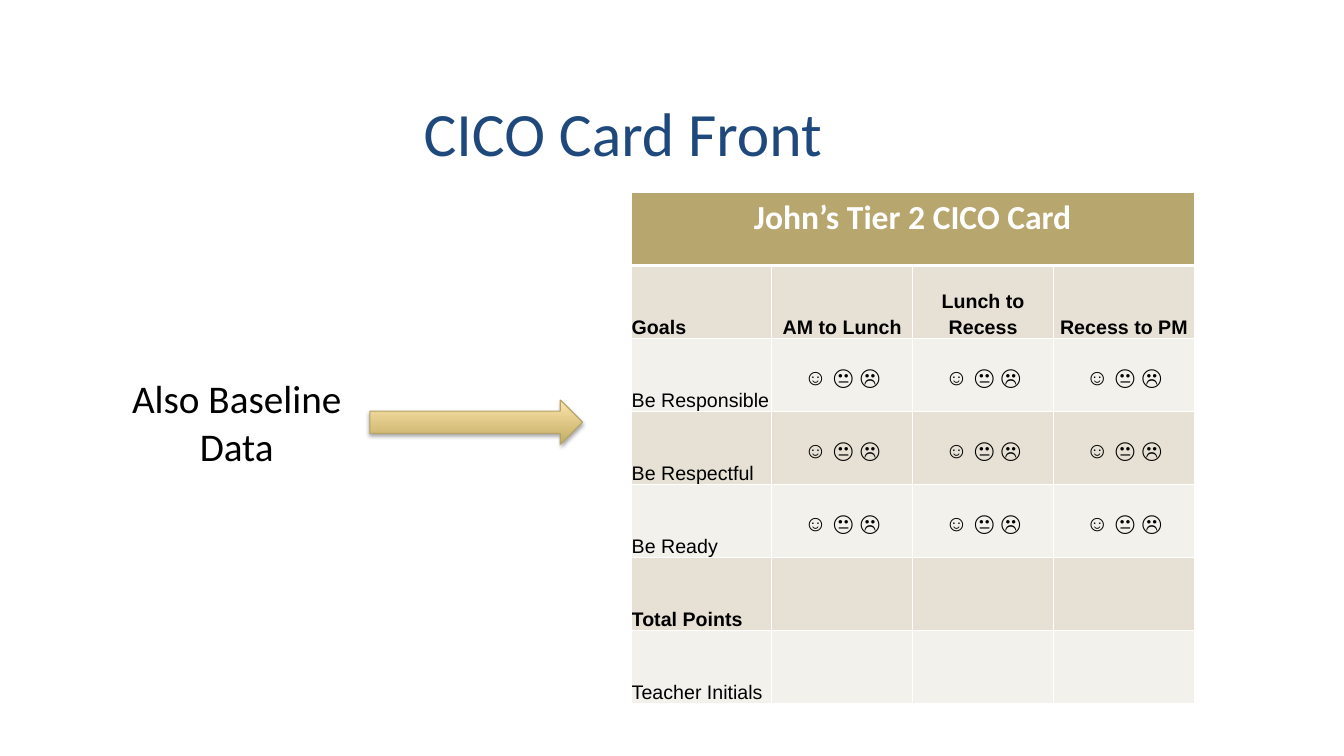
import lxml.etree
import pptx
import pptx.dml.color
import pptx.enum.shapes
import pptx.enum.text
import pptx.oxml.ns
import pptx.util
from pptx.util import Cm

ALIGN = pptx.enum.text.PP_ALIGN
ANCHOR = pptx.enum.text.MSO_ANCHOR
FACES = "☺ 😐 ☹"
PERIODS = ["AM to Lunch", "Lunch to Recess", "Recess to PM"]
ROWS = [
    ["Goals"] + PERIODS,
    ["Be Responsible"] + [FACES] * 3,
    ["Be Respectful"] + [FACES] * 3,
    ["Be Ready"] + [FACES] * 3,
    ["Total Points"] + [""] * 3,
    ["Teacher Initials"] + [""] * 3,
]
BOLD_TEXTS = ["Goals", "Total Points"] + PERIODS
BAND_COLOURS = ["E6E1D4", "F3F1EB"]


def set_colour(colour_format, value):
    colour_format.rgb = pptx.dml.color.RGBColor.from_string(value)


def add_element(parent, tag, **attributes):
    element = lxml.etree.SubElement(parent, pptx.oxml.ns.qn(tag))
    for name, value in attributes.items():
        element.set(name, str(value))
    return element


def write_text(text_frame, text, size, font, colour, bold=False, align=ALIGN.CENTER):
    text_frame.text = text
    paragraph = text_frame.paragraphs[0]
    paragraph.alignment = align
    for run in paragraph.runs:
        run.font.size = pptx.util.Pt(size)
        run.font.name = font
        run.font.bold = bold
        set_colour(run.font.color, colour)
    return paragraph


def add_text(slide, left, top, width, height, text, size, colour):
    shape = slide.shapes.add_textbox(Cm(left), Cm(top), Cm(width), Cm(height))
    text_frame = shape.text_frame
    text_frame.word_wrap = True
    write_text(text_frame, text, size, "Calibri", colour)
    return text_frame


def add_arrow(slide, left, top, width, height):
    arrow = slide.shapes.add_shape(
        pptx.enum.shapes.MSO_SHAPE.RIGHT_ARROW, Cm(left), Cm(top), Cm(width), Cm(height)
    )
    arrow.fill.gradient()
    arrow.fill.gradient_angle = 90
    for stop, colour in zip(arrow.fill.gradient_stops, ["C2AC62", "FCE5AB"]):
        set_colour(stop.color, colour)
    set_colour(arrow.line.color, "B5A369")
    arrow.line.width = pptx.util.Pt(0.75)
    arrow.shadow.inherit = False
    effects = arrow.element.spPr.find(pptx.oxml.ns.qn("a:effectLst"))
    shadow = add_element(
        effects, "a:outerShdw",
        blurRad=pptx.util.Pt(3.1), dist=pptx.util.Pt(1.8), dir=5400000, rotWithShape=0,
    )
    shadow_colour = add_element(shadow, "a:srgbClr", val="000000")
    add_element(shadow_colour, "a:alpha", val=35000)


def style_cell(cell, fill, top=1, bottom=1):
    properties = cell._tc.get_or_add_tcPr()
    for side, width in [("L", 1), ("R", 1), ("T", top), ("B", bottom)]:
        line = add_element(properties, "a:ln" + side, w=pptx.util.Pt(width))
        line_fill = add_element(line, "a:solidFill")
        add_element(line_fill, "a:srgbClr", val="FFFFFF")
    cell.fill.solid()
    set_colour(cell.fill.fore_color, fill)


def fill_goal_cell(cell, text, align):
    is_faces = text == FACES
    cell.margin_left = cell.margin_right = cell.margin_top = Cm(0.02)
    cell.margin_bottom = 0
    cell.vertical_anchor = ANCHOR.MIDDLE if is_faces else ANCHOR.BOTTOM
    paragraph = write_text(
        cell.text_frame, text, 16 if is_faces else 14, "Arial", "000000",
        text in BOLD_TEXTS, align,
    )
    paragraph.line_spacing = 1.15
    paragraph.space_after = pptx.util.Pt(0 if is_faces else 10)


def add_card(slide, left, top, column_width, row_height):
    row_count, column_count = len(ROWS) + 1, len(ROWS[0])
    table = slide.shapes.add_table(
        row_count, column_count, Cm(left), Cm(top),
        Cm(column_width * column_count), Cm(row_height * row_count),
    ).table
    table.first_row = False
    table.horz_banding = False
    for column in table.columns:
        column.width = Cm(column_width)
    for row in table.rows:
        row.height = Cm(row_height)
    for column_index in range(column_count):
        style_cell(table.cell(0, column_index), "B7A66D", bottom=3)
    title_cell = table.cell(0, 0)
    title_cell.merge(table.cell(0, column_count - 1))
    write_text(title_cell.text_frame, "John’s Tier 2 CICO Card", 24, "Calibri", "FFFFFF", True)
    for row_index, texts in enumerate(ROWS):
        for column_index, text in enumerate(texts):
            cell = table.cell(row_index + 1, column_index)
            style_cell(cell, BAND_COLOURS[row_index % 2], top=3 if row_index == 0 else 1)
            if text:
                fill_goal_cell(cell, text, ALIGN.CENTER if column_index else ALIGN.LEFT)


def main():
    presentation = pptx.Presentation()
    presentation.slide_width = Cm(33.87)
    presentation.slide_height = Cm(19.05)
    slide = presentation.slides.add_slide(presentation.slide_layouts[6])
    title = add_text(slide, 0.97, 1.24, 29.46, 4.19, "CICO Card Front", 44, "1F497D")
    title.vertical_anchor = ANCHOR.MIDDLE
    add_card(slide, 15.9, 4.85, 3.55, 1.84)
    add_arrow(slide, 9.32, 10.08, 5.36, 1.12)
    label = add_text(slide, 2.64, 9.32, 6.65, 2.64, "Also Baseline Data", 28, "000000")
    label.auto_size = pptx.enum.text.MSO_AUTO_SIZE.SHAPE_TO_FIT_TEXT
    presentation.save("out.pptx")


if __name__ == "__main__":
    main()
